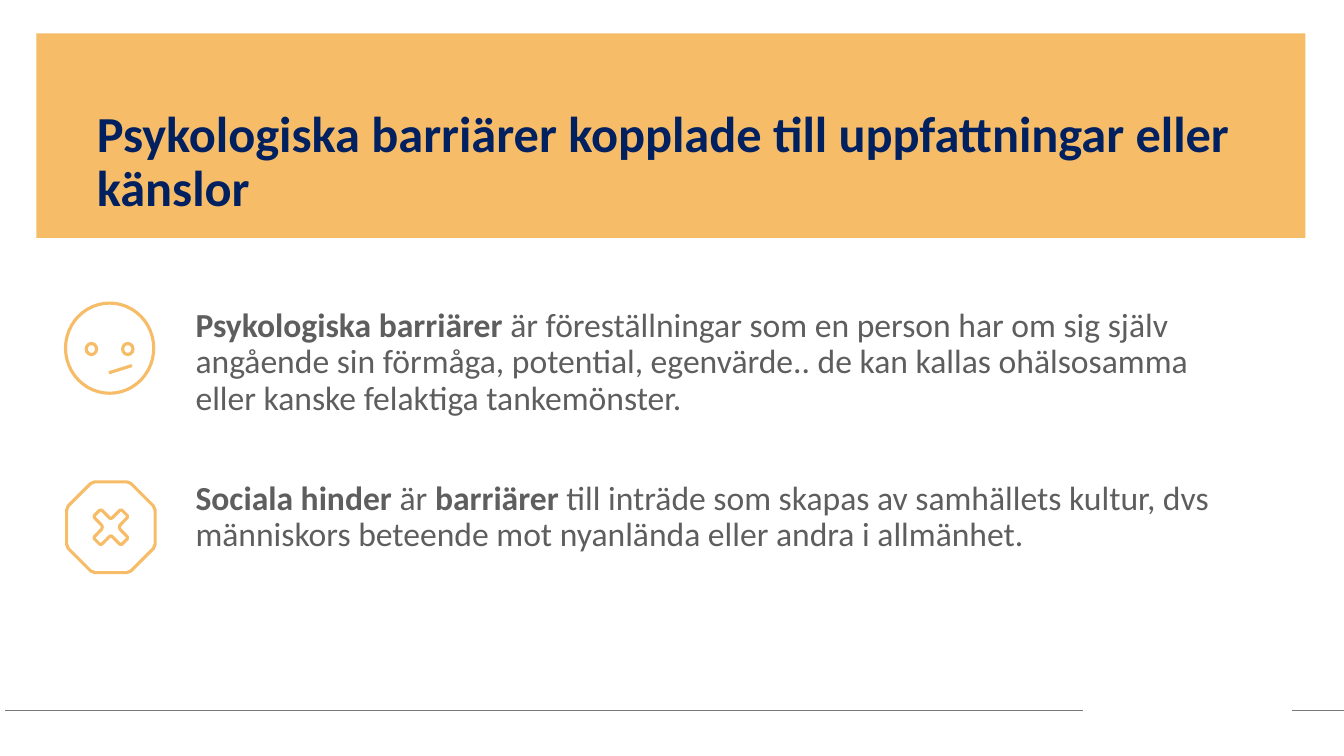
from lxml import etree
from pptx import Presentation
from pptx.dml.color import RGBColor
from pptx.enum import shapes, text
from pptx.oxml import ns
from pptx.util import Pt

ORANGE = RGBColor(0xF6, 0xBC, 0x67)
NAVY = RGBColor(0x00, 0x20, 0x60)
DARK_GRAY = RGBColor(0x5E, 0x5E, 0x5E)
RULE_GRAY = RGBColor(0x79, 0x79, 0x79)
FONT = "Calibri"
ICON_WEIGHT = 2.25

TITLE = "Psykologiska barriärer kopplade till uppfattningar eller känslor"
BARRIERS = [
    [
        ("Psykologiska barriärer", True),
        (
            " är föreställningar som en person har om sig själv angående sin förmåga, "
            "potential, egenvärde.. de kan kallas ohälsosamma eller kanske felaktiga "
            "tankemönster.",
            False,
        ),
    ],
    [
        ("Sociala hinder", True),
        (" är ", False),
        ("barriärer", True),
        (
            " till inträde som skapas av samhällets kultur, dvs människors beteende "
            "mot nyanlända eller andra i allmänhet.",
            False,
        ),
    ],
]

OCTAGON_QUARTER = [(11.5, -32.4), (14.4, -31.2), (30.4, -15.2), (31.6, -12.2)]
CROSS_QUARTER = [
    (0, -6.2), (0.9, -6.6), (6.5, -12.2), (7.9, -12.2),
    (11.8, -8.3), (11.8, -6.9), (6.5, -1.4), (6.1, 0),
]


def add_run(paragraph, content, size, color, bold=False):
    run = paragraph.add_run()
    run.text = content
    run.font.name = FONT
    run.font.size = Pt(size)
    run.font.bold = bold
    run.font.color.rgb = color


def place_placeholder(placeholder, left, top, width, height):
    placeholder.left, placeholder.top = Pt(left), Pt(top)
    placeholder.width, placeholder.height = Pt(width), Pt(height)
    frame = placeholder.text_frame
    frame.word_wrap = True
    frame.auto_size = text.MSO_AUTO_SIZE.NONE
    frame.vertical_anchor = text.MSO_ANCHOR.TOP
    return frame


def format_paragraph(paragraph, space_before=0):
    properties = paragraph._p.get_or_add_pPr()
    properties.set("marL", "0")
    properties.set("indent", "0")
    etree.SubElement(properties, ns.qn("a:buNone"))
    paragraph.alignment = text.PP_ALIGN.LEFT
    paragraph.line_spacing = 0.9
    paragraph.space_before = Pt(space_before)


def style_outline(shape):
    shape.shadow.inherit = False
    shape.fill.background()
    shape.line.color.rgb = ORANGE
    shape.line.width = Pt(ICON_WEIGHT)


def add_line(slide, start, end, color, weight):
    line = slide.shapes.add_connector(
        shapes.MSO_CONNECTOR.STRAIGHT, *(Pt(value) for value in start + end)
    )
    line.line.color.rgb = color
    line.line.width = Pt(weight)
    etree.SubElement(line._element.spPr, ns.qn("a:effectLst"))


def add_ring(slide, center_x, center_y, width, height):
    ring = slide.shapes.add_shape(
        shapes.MSO_SHAPE.OVAL,
        Pt(center_x - width / 2), Pt(center_y - height / 2), Pt(width), Pt(height),
    )
    style_outline(ring)


def mirror_quarter(quarter, center_x, center_y):
    right = quarter + [(x, -y) for x, y in reversed(quarter)]
    outline = right + [(-x, y) for x, y in reversed(right)]
    return [(Pt(center_x + x), Pt(center_y + y)) for x, y in outline]


def add_banner(slide, left, top, width, height):
    banner = slide.shapes.add_shape(
        shapes.MSO_SHAPE.RECTANGLE, Pt(left), Pt(top), Pt(width), Pt(height)
    )
    banner.shadow.inherit = False
    banner.fill.solid()
    banner.fill.fore_color.rgb = ORANGE
    banner.line.fill.background()
    title = slide.shapes.title
    title._element.addprevious(banner._element)
    frame = place_placeholder(title, left + 36, top + 50.4, width - 74.9, 54.7)
    paragraph = frame.paragraphs[0]
    format_paragraph(paragraph)
    add_run(paragraph, TITLE, size=36, color=NAVY, bold=True)


def add_barriers(slide, left, top, width, height):
    frame = place_placeholder(slide.placeholders[1], left, top, width, height)
    for index, runs in enumerate(BARRIERS):
        paragraph = frame.add_paragraph() if index else frame.paragraphs[0]
        format_paragraph(paragraph, space_before=46 if index else 0)
        for content, bold in runs:
            add_run(paragraph, content, size=24, color=DARK_GRAY, bold=bold)


def add_face_icon(slide, left, top, width, height):
    center_x, center_y = left + width / 2, top + height / 2
    add_ring(slide, center_x, center_y, width, height)
    for side in (-1, 1):
        add_ring(slide, center_x + side * 13, center_y + 0.6, 7.4, 7.9)
    add_line(
        slide,
        (center_x - 0.5, center_y + 17.6),
        (center_x + 16, center_y + 12.4),
        ORANGE,
        ICON_WEIGHT,
    )


def add_stop_icon(slide, left, top, width, height):
    center_x, center_y = left + width / 2, top + height / 2
    octagon = mirror_quarter(OCTAGON_QUARTER, center_x, center_y)
    cross = mirror_quarter(CROSS_QUARTER, center_x, center_y)
    builder = slide.shapes.build_freeform(*octagon[0])
    builder.add_line_segments(octagon[1:], close=True)
    builder.move_to(*cross[0])
    builder.add_line_segments(cross[1:], close=True)
    style_outline(builder.convert_to_shape())


def add_footer_rule(slide, left, top, width):
    right = left + width
    for start, end in ((left, right - 186.5), (right - 37, right)):
        add_line(slide, (start, top), (end, top), RULE_GRAY, 0.5)


def main():
    presentation = Presentation()
    presentation.slide_width = Pt(960)
    presentation.slide_height = Pt(540)
    slide = presentation.slides.add_slide(presentation.slide_layouts[1])
    add_banner(slide, 25.9, 23.8, 906.5, 146.2)
    add_barriers(slide, 132.5, 216.7, 761, 255.6)
    add_face_icon(slide, 46.8, 216.5, 63, 64.4)
    add_stop_icon(slide, 47.6, 344.2, 63.2, 64.8)
    add_footer_rule(slide, 3.6, 507.6, 956.4)
    presentation.save("out.pptx")


if __name__ == "__main__":
    main()
